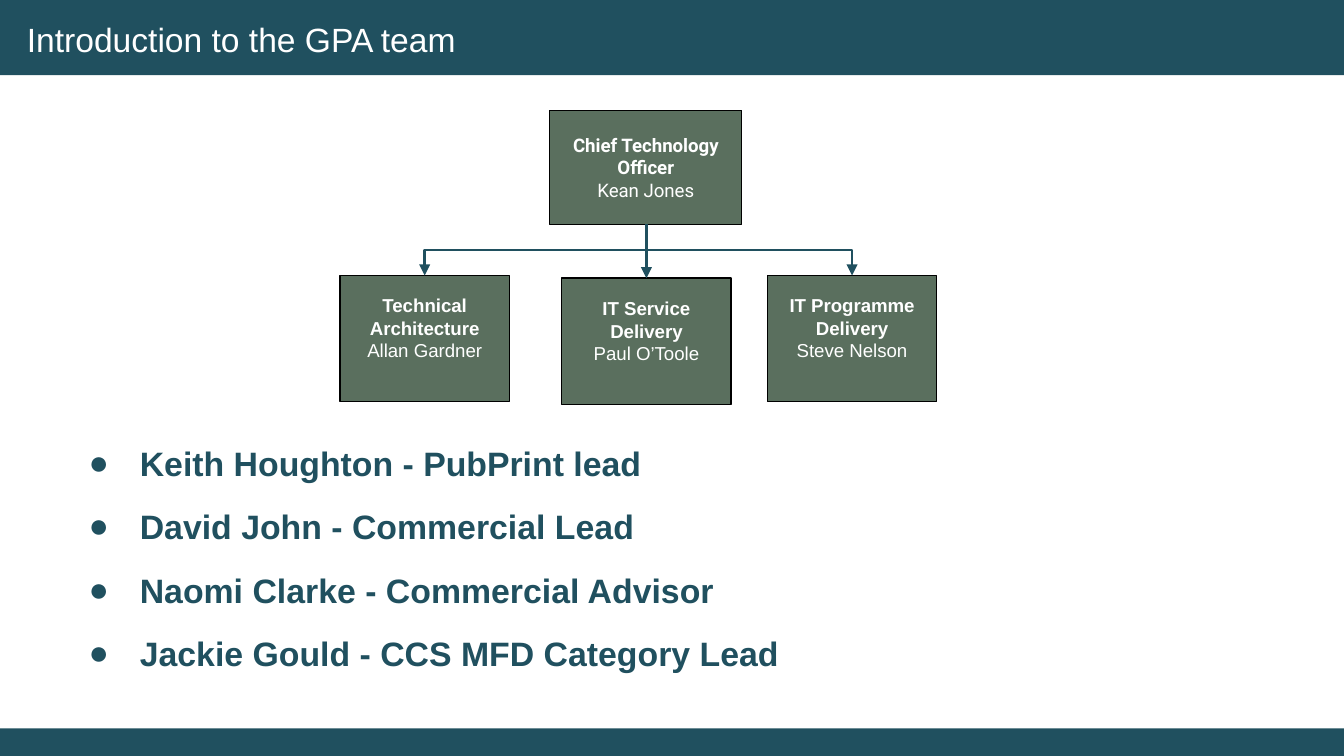
from lxml import etree
from pptx import Presentation
from pptx.dml.color import RGBColor
from pptx.enum.shapes import MSO_CONNECTOR, MSO_SHAPE
from pptx.enum.text import MSO_ANCHOR, MSO_AUTO_SIZE, PP_ALIGN
from pptx.oxml.ns import qn
from pptx.util import Inches, Pt

RECTANGLE = MSO_SHAPE.RECTANGLE
STRAIGHT, ELBOW = MSO_CONNECTOR.STRAIGHT, MSO_CONNECTOR.ELBOW
TOP, MIDDLE = MSO_ANCHOR.TOP, MSO_ANCHOR.MIDDLE
LEFT, CENTER = PP_ALIGN.LEFT, PP_ALIGN.CENTER
NO_FIT = MSO_AUTO_SIZE.NONE

COLORS = {"teal": "20505F", "green": "5A6F5E", "black": "000000", "white": "FFFFFF"}
COLUMNS, ROWS = 100, 56.25
QUARTER_TURN = 90 * 60000
LINE_PITCH = 0.16


class SlideBuilder:
    def __init__(self, presentation):
        self.slide = presentation.slides.add_slide(presentation.slide_layouts[1])
        self.column = presentation.slide_width / COLUMNS
        self.row = presentation.slide_height / ROWS

    def color(self, name):
        return RGBColor.from_string(COLORS[name])

    def point(self, column, row):
        return round(column * self.column), round(row * self.row)

    def place(self, shape, left, top, width, height):
        shape.left, shape.top = self.point(left, top)
        shape.width, shape.height = self.point(width, height)

    def frame(self, shape, insets, anchor):
        frame = shape.text_frame
        frame.word_wrap = True
        frame.auto_size = NO_FIT
        frame.vertical_anchor = anchor
        (frame.margin_left, frame.margin_top,
         frame.margin_right, frame.margin_bottom) = map(Inches, insets)
        return frame

    def run(self, paragraph, text, size, color, bold=False, font="Arial"):
        run = paragraph.add_run()
        run.text = text
        run.font.name = font
        run.font.size = Pt(size)
        run.font.bold = bold
        run.font.color.rgb = self.color(color)

    def box(self, left, top, width, height, fill, line=None):
        shape = self.slide.shapes.add_shape(
            RECTANGLE, *self.point(left, top), *self.point(width, height))
        shape.shadow.inherit = False
        shape.fill.solid()
        shape.fill.fore_color.rgb = self.color(fill)
        if line:
            shape.line.color.rgb = self.color(line)
            shape.line.width = Pt(0.75)
        else:
            shape.line.fill.background()
        return shape

    def title(self, text):
        title = self.slide.shapes.title
        self.place(title, 2, 1.4, 63.3, 3)
        paragraph = self.frame(title, (0, 0, 0.1, 0), TOP).paragraphs[0]
        paragraph.alignment = LEFT
        self.run(paragraph, text, 18, "white")
        title.element.getparent().append(title.element)

    def role(self, left, top, width, height, role, person, font="Arial", spare_lines=0):
        shape = self.box(left, top, width, height, "green", "black")
        frame = self.frame(shape, (0.1, 0.1, 0.1, 0.1 + spare_lines * LINE_PITCH), MIDDLE)
        for index, text in enumerate((role, person)):
            paragraph = frame.add_paragraph() if index else frame.paragraphs[0]
            paragraph.alignment = CENTER
            self.run(paragraph, text, 10, "white", index == 0, font)

    def arrow(self, start, end):
        (x1, y1), (x2, y2) = start, end
        bent = x1 != x2
        if bent:
            middle_x, middle_y = (x1 + x2) / 2, (y1 + y2) / 2
            side = 1 if x2 > x1 else -1
            half_width, half_height = side * (y2 - y1) / 2, abs(x2 - x1) / 2
            start = middle_x + half_width, middle_y - half_height
            end = middle_x - half_width, middle_y + half_height
        connector = self.slide.shapes.add_connector(
            ELBOW if bent else STRAIGHT, *self.point(*start), *self.point(*end))
        connector.line.color.rgb = self.color("teal")
        connector.line.width = Pt(1.5)
        properties = connector.element.spPr
        if bent:
            turns = 3 if side > 0 else 1
            properties.find(qn("a:xfrm")).set("rot", str(turns * QUARTER_TURN))
        etree.SubElement(properties.find(qn("a:ln")), qn("a:tailEnd"), type="triangle")
        etree.SubElement(properties, qn("a:effectLst"))

    def bullets(self, items):
        body = self.slide.placeholders[1]
        self.place(body, 4.4, 33, 61.4, 16)
        frame = self.frame(body, (0.1, 0.05, 0.1, 0.05), TOP)
        for index, text in enumerate(items):
            paragraph = frame.add_paragraph() if index else frame.paragraphs[0]
            paragraph.alignment = LEFT
            paragraph.line_spacing = 0.8
            paragraph.space_before = Pt(16.6 if index else 0)
            properties = paragraph._p.get_or_add_pPr()
            properties.set("marL", str(Inches(0.5)))
            properties.set("indent", str(Inches(-0.38)))
            bullet_color = etree.SubElement(properties, qn("a:buClr"))
            etree.SubElement(bullet_color, qn("a:srgbClr"), val=COLORS["teal"])
            etree.SubElement(properties, qn("a:buFont"), typeface="Arial")
            etree.SubElement(properties, qn("a:buChar"), char="●")
            self.run(paragraph, text, 18.1, "teal", True)


def main():
    presentation = Presentation()
    presentation.slide_width, presentation.slide_height = Inches(10), Inches(5.625)
    builder = SlideBuilder(presentation)

    for top, height in ((0, 5.6), (54.2, 2.05)):
        builder.box(0, top, COLUMNS, height, "teal")
    builder.title("Introduction to the GPA team")

    builder.role(40.9, 8.2, 14.3, 8.5, "Chief Technology Officer", "Kean Jones", "Roboto")
    width, height = 12.6, 9.4
    trunk = 48.1, 16.7
    teams = (
        (25.3, 20.5, "Technical Architecture", "Allan Gardner"),
        (41.8, 20.7, "IT Service Delivery", "Paul O’Toole"),
        (57.1, 20.5, "IT Programme Delivery", "Steve Nelson"),
    )
    for left, top, role, person in teams:
        builder.role(left, top, width, height, role, person, spare_lines=1)
        builder.arrow(trunk, (left + width / 2, top))

    builder.bullets((
        "Keith Houghton - PubPrint lead",
        "David John - Commercial Lead",
        "Naomi Clarke - Commercial Advisor",
        "Jackie Gould - CCS MFD Category Lead",
    ))
    presentation.save("out.pptx")


if __name__ == "__main__":
    main()
